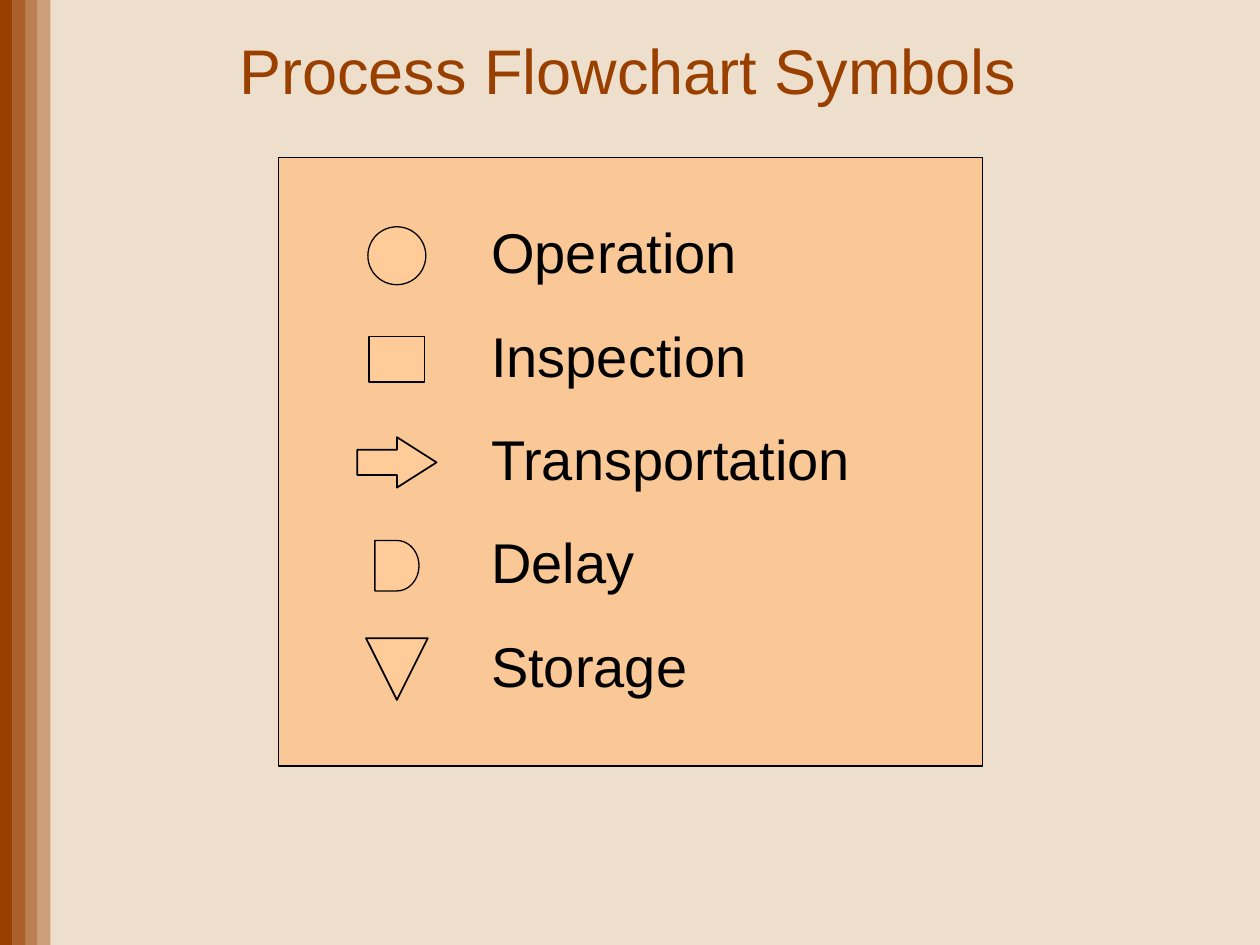
from lxml import etree
from pptx import Presentation
from pptx.dml.color import RGBColor
from pptx.enum.shapes import MSO_SHAPE
from pptx.enum.text import MSO_ANCHOR, MSO_AUTO_SIZE, PP_ALIGN
from pptx.oxml.ns import qn
from pptx.util import Inches, Pt

RECTANGLE = MSO_SHAPE.RECTANGLE
CIRCLE = MSO_SHAPE.OVAL
ARROW = MSO_SHAPE.RIGHT_ARROW
DELAY = MSO_SHAPE.FLOWCHART_DELAY
TRIANGLE = MSO_SHAPE.ISOSCELES_TRIANGLE
CENTER = PP_ALIGN.CENTER
MIDDLE = MSO_ANCHOR.MIDDLE
FIT_SHAPE = MSO_AUTO_SIZE.SHAPE_TO_FIT_TEXT

BACKGROUND = RGBColor(0xEE, 0xDF, 0xCC)
BROWN = RGBColor(0x99, 0x40, 0x00)
PANEL = RGBColor(0xFA, 0xC8, 0x96)
PEACH = RGBColor(0xFF, 0xCC, 0x99)
BLACK = RGBColor(0x00, 0x00, 0x00)

BAR_WIDTH = 0.1
BAR_OPACITIES = (100, 80, 60, 40)
SYMBOL_X, SYMBOL_Y = 3.15, 2.03  # centre of the first symbol
LABEL_X, LABEL_Y, LABEL_HEIGHT = 3.8, 1.68, 0.64
ROW_PITCH = 0.82

# label, label width, symbol, symbol width, symbol height, line width
ROWS = (
    ("Operation", 2.17, CIRCLE, 0.46, 0.46, 0.75),
    ("Inspection", 2.24, RECTANGLE, 0.44, 0.36, 1),
    ("Transportation", 3.07, ARROW, 0.63, 0.4, 1),
    ("Delay", 1.35, DELAY, 0.35, 0.4, 0.75),
    ("Storage", 1.77, TRIANGLE, 0.49, 0.49, 1),
)


class SymbolSlide:
    """Holds the slide, its style and the group its legend is drawn in."""

    font_name = "Arial"

    def __init__(self, slide):
        self.slide = slide
        fill = slide.background.fill
        fill.solid()
        fill.fore_color.rgb = BACKGROUND
        self.legend = None

    def start_legend(self):
        self.legend = self.slide.shapes.add_group_shape().shapes

    def add_text(self, paragraph, text, size, color):
        run = paragraph.add_run()
        run.text = text
        run.font.name = self.font_name
        run.font.size = Pt(size)
        run.font.color.rgb = color

    def title(self, text, left, top, width, height):
        title = self.slide.shapes.title
        title.left, title.top = Inches(left), Inches(top)
        title.width, title.height = Inches(width), Inches(height)
        frame = title.text_frame
        frame.vertical_anchor = MIDDLE
        paragraph = frame.paragraphs[0]
        paragraph.alignment = CENTER
        paragraph.line_spacing = 0.85
        self.add_text(paragraph, text, 36, BROWN)

    def shape(self, kind, left, top, width, height, color, line_width=None):
        shapes = self.slide.shapes if self.legend is None else self.legend
        shape = shapes.add_shape(kind, Inches(left), Inches(top),
                                 Inches(width), Inches(height))
        shape.shadow.inherit = False
        shape.fill.solid()
        shape.fill.fore_color.rgb = color
        if line_width is None:
            shape.line.fill.background()
        else:
            shape.line.color.rgb = BLACK
            shape.line.width = Pt(line_width)
        return shape

    def bar(self, left, opacity):
        bar = self.shape(RECTANGLE, left, 0, BAR_WIDTH, 7.5, BROWN)
        if opacity < 100:
            color = bar._element.spPr.find(qn("a:solidFill"))[0]
            etree.SubElement(color, qn("a:alpha"), val=str(opacity * 1000))

    def symbol(self, kind, center_y, width, height, line_width):
        symbol = self.shape(kind, SYMBOL_X - width / 2, center_y - height / 2,
                            width, height, PEACH, line_width)
        if kind == ARROW:
            symbol.adjustments[1] = 0.785
        elif kind == TRIANGLE:
            symbol.rotation = 180

    def label(self, text, top, width):
        label = self.legend.add_textbox(Inches(LABEL_X), Inches(top),
                                        Inches(width), Inches(LABEL_HEIGHT))
        frame = label.text_frame
        frame.word_wrap = False
        frame.auto_size = FIT_SHAPE
        self.add_text(frame.paragraphs[0], text, 32, BLACK)


def main():
    deck = Presentation()
    deck.slide_width, deck.slide_height = Inches(10), Inches(7.5)
    page = SymbolSlide(deck.slides.add_slide(deck.slide_layouts[5]))

    for column, opacity in enumerate(BAR_OPACITIES):
        page.bar(column * BAR_WIDTH, opacity)
    page.title("Process Flowchart Symbols", 1.36, 0.09, 7.25, 1.01)

    page.start_legend()
    page.shape(RECTANGLE, 2.21, 1.25, 5.59, 4.83, PANEL, 0.75)
    for row, (name, name_width, kind, width, height, line) in enumerate(ROWS):
        offset = row * ROW_PITCH
        page.symbol(kind, SYMBOL_Y + offset, width, height, line)
        page.label(name, LABEL_Y + offset, name_width)

    deck.save("out.pptx")


if __name__ == "__main__":
    main()
